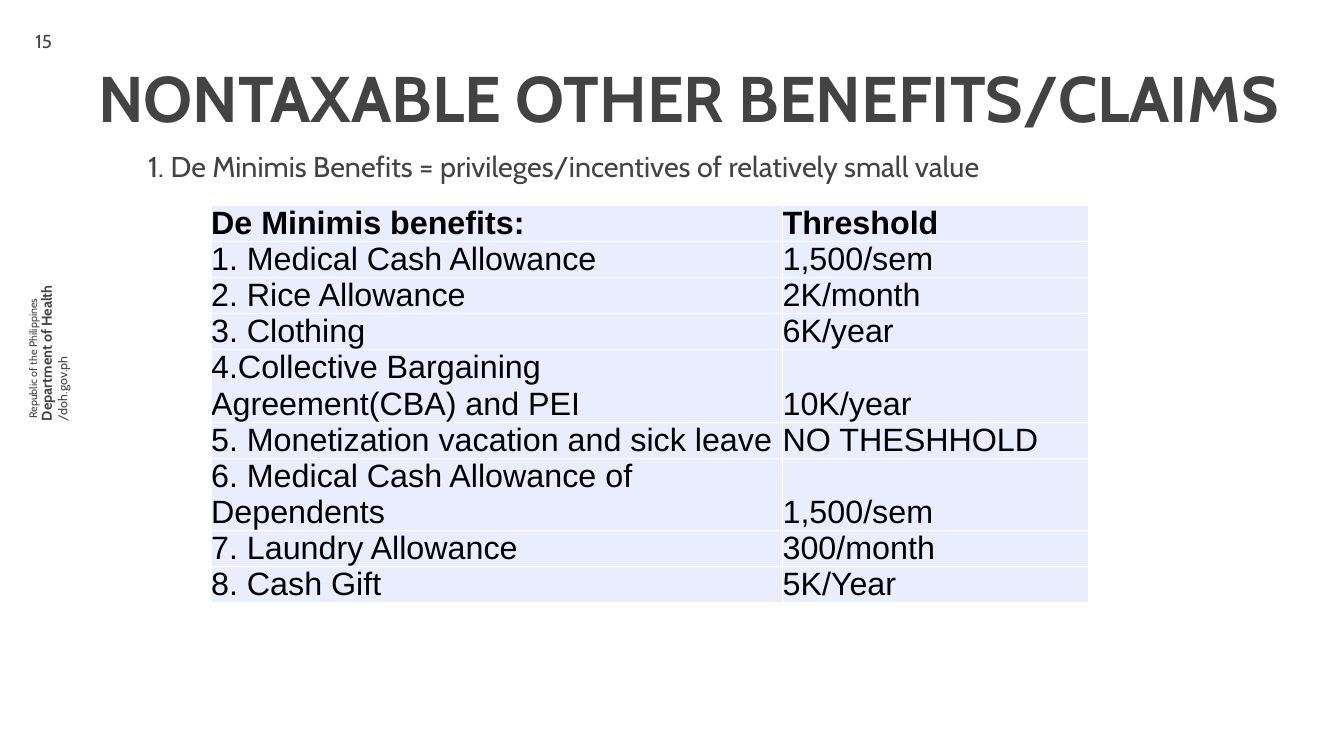
from lxml.etree import SubElement
from pptx import Presentation
from pptx.dml.color import RGBColor
from pptx.enum.text import MSO_ANCHOR as Anchor, MSO_AUTO_SIZE as AutoSize, PP_ALIGN as Align
from pptx.oxml.ns import qn
from pptx.util import Cm, Pt

COLOURS = {"text": "434343", "table_text": "000000", "cell": "E9EDFD", "border": "FFFFFF"}
BENEFITS = [
    ("De Minimis benefits:", "Threshold"),
    ("1. Medical Cash Allowance", "1,500/sem"),
    ("2. Rice Allowance", "2K/month"),
    ("3. Clothing", "6K/year"),
    ("4.Collective Bargaining Agreement(CBA) and PEI", "10K/year"),
    ("5. Monetization vacation and sick leave", "NO THESHHOLD"),
    ("6. Medical Cash Allowance of Dependents", "1,500/sem"),
    ("7. Laundry Allowance", "300/month"),
    ("8. Cash Gift", "5K/Year"),
]
SIDEBAR = [
    ("Department of Health", (-1.78, 13.31, 7.21, 1.19), 16, True, Align.CENTER),
    ("/doh.gov.ph", (-1.14, 12.67, 7.21, 1.12), 14, False, Align.LEFT),
    ("Republic of the Philippines", (-2.31, 13.61, 7.21, 1.02), 12, False, Align.CENTER),
]


def apply(target, values):
    """Set every attribute named in a dict of format values."""
    for name, value in values.items():
        setattr(target, name, value)


def margins(size):
    """Return equal margins for the four sides of a frame or cell."""
    return {f"margin_{side}": Cm(size) for side in ("left", "top", "right", "bottom")}


class BenefitsPage:
    """Holds the slide and its style, and adds each kind of element."""

    def __init__(self, deck):
        """Add a title-only page to the deck."""
        self.page = deck.slides.add_slide(deck.slide_layouts[5])
        self.font = "Cabin"

    def add_span(self, para, text, size, bold=False, font=None, colour="text"):
        """Put one formatted run of text in a paragraph."""
        span = para.add_run()
        span.text = text
        apply(span.font, {"name": font or self.font, "size": Pt(size), "bold": bold})
        span.font.color.rgb = RGBColor.from_string(COLOURS[colour])

    def fill_box(self, box, text, size, bold=False, inset=0.53, anchor=Anchor.TOP,
                 align=Align.LEFT, spacing=1.0):
        """Format the frame of a box and fill its paragraph."""
        apply(box.text_frame, {"word_wrap": True, "auto_size": AutoSize.NONE,
                               "vertical_anchor": anchor, **margins(inset)})
        para = box.text_frame.paragraphs[0]
        apply(para, {"alignment": align, "line_spacing": spacing, "space_before": Pt(0)})
        self.add_span(para, text, size, bold)

    def title(self, text, place, size):
        """Move and format the title placeholder."""
        box = self.page.shapes.title
        apply(box, dict(zip(("left", "top", "width", "height"), map(Cm, place))))
        self.fill_box(box, text, size, bold=True, spacing=0.8)

    def text(self, text, place, size, rotation=0, **style):
        """Add a text box, turned if needed."""
        box = self.page.shapes.add_textbox(*map(Cm, place))
        box.rotation = rotation
        self.fill_box(box, text, size, **style)

    def border(self, cell):
        """Draw a thin line on all four sides of a cell."""
        properties = cell._tc.get_or_add_tcPr()
        for side in ("lnL", "lnR", "lnT", "lnB"):
            line = SubElement(properties, qn(f"a:{side}"), w=str(Pt(1)))
            solid = SubElement(line, qn("a:solidFill"))
            SubElement(solid, qn("a:srgbClr"), val=COLOURS["border"])

    def table(self, rows, left, top, widths, heights):
        """Add a table with a bold heading row."""
        place = map(Cm, (left, top, sum(widths), sum(heights)))
        table = self.page.shapes.add_table(len(rows), len(widths), *place).table
        apply(table, {"horz_banding": False, "first_row": True})
        for column, width in zip(table.columns, widths):
            column.width = Cm(width)
        for index, (row, height) in enumerate(zip(table.rows, heights)):
            row.height = Cm(height)
            for cell, text in zip(row.cells, rows[index]):
                apply(cell, {"vertical_anchor": Anchor.BOTTOM, **margins(0)})
                self.border(cell)
                cell.fill.solid()
                cell.fill.fore_color.rgb = RGBColor.from_string(COLOURS["cell"])
                self.add_span(cell.text_frame.paragraphs[0], text, 36, index == 0,
                              "Arial", "table_text")


def main():
    """Build the deck and save it."""
    deck = Presentation()
    apply(deck, {"slide_width": Cm(52.91), "slide_height": Cm(29.77)})
    page = BenefitsPage(deck)
    for text, place, size, bold, align in SIDEBAR:
        page.text(text, place, size, rotation=270, bold=bold, align=align, inset=0.25)
    page.text("15", (0.86, 0.48, 1.9, 2.29), 21, anchor=Anchor.MIDDLE)
    page.title("NONTAXABLE OTHER BENEFITS/CLAIMS", (3.33, 2.36, 47.88, 7.26), 72)
    page.text("1. De Minimis Benefits = privileges/incentives of relatively small value",
              (5.3, 5.33, 44.3, 20.9), 32)
    heights = [2.29 if row[0].startswith("4.") else 1.24 for row in BENEFITS]
    page.table(BENEFITS, 8.31, 8.08, (22.5, 12.04), heights)
    deck.save("out.pptx")


if __name__ == "__main__":
    main()
